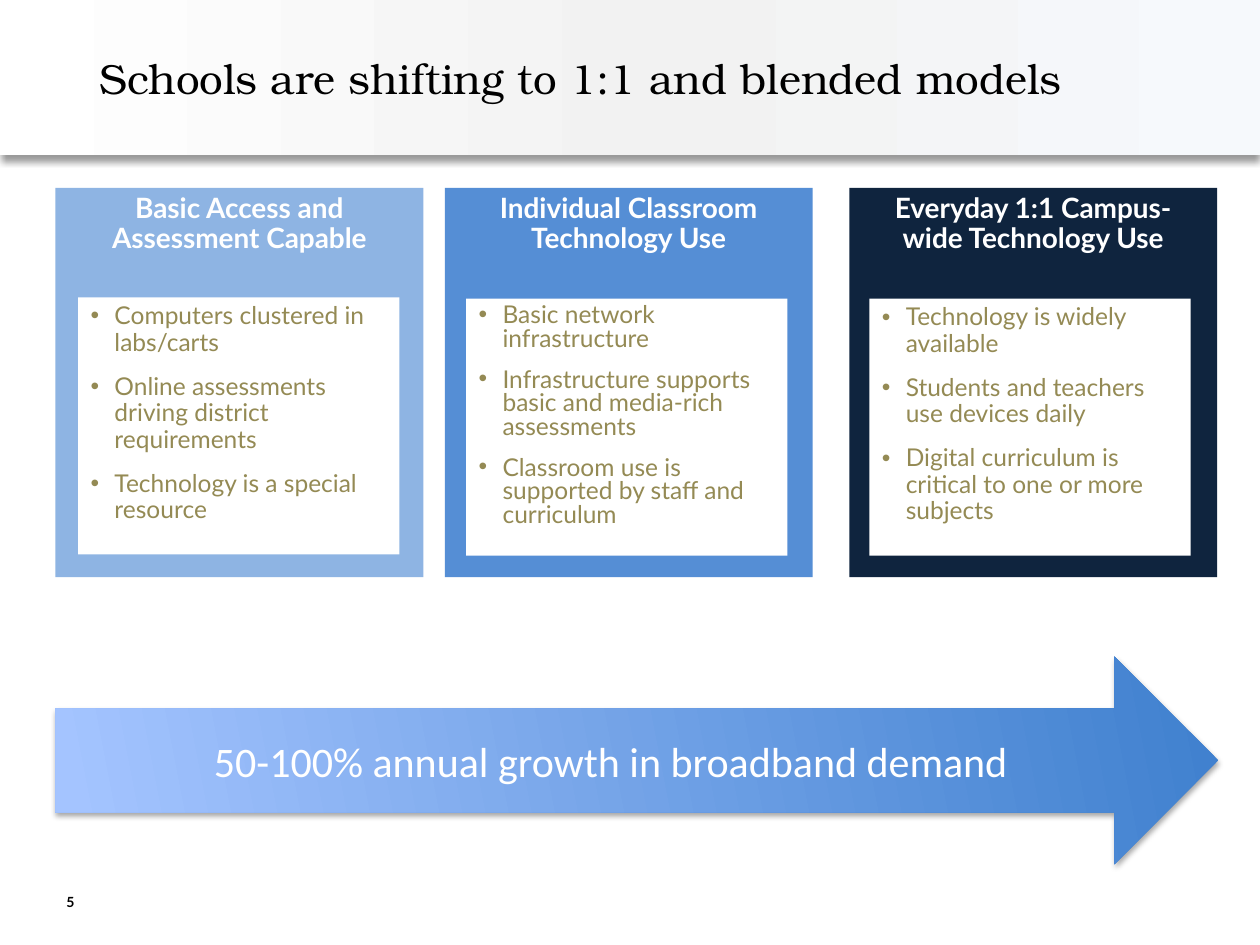
from dataclasses import dataclass

from lxml.etree import SubElement
from pptx import Presentation
from pptx.dml.color import RGBColor
from pptx.enum.shapes import MSO_SHAPE as Shape
from pptx.enum.text import MSO_ANCHOR as Anchor, PP_ALIGN as Align
from pptx.oxml.ns import qn
from pptx.util import Inches, Pt


@dataclass(frozen=True)
class Theme:
    white: str = "FFFFFF"
    black: str = "000000"
    bullet_text: str = "948A54"
    light_blue: str = "8EB4E3"
    mid_blue: str = "558ED5"
    navy: str = "0F243E"
    banner_stops: tuple = ((0, "F6F9FC"), (48, "F2F2F2"), (100, "FFFFFF"))
    arrow_stops: tuple = ((0, "3F80CE"), (98, "A4C4FF"))
    title_font: str = "TeX Gyre Bonum"
    body_font: str = "Lato"
    arrow_font: str = "Calibri"
    title_size: int = 24
    heading_size: int = 16
    bullet_size: int = 14
    number_size: int = 8


class SlideBuilder:
    def __init__(self, slide, theme):
        self.slide = slide
        self.theme = theme

    def shape(self, kind, box, color=None):
        shape = self.slide.shapes.add_shape(kind, *map(Inches, box))
        shape.shadow.inherit = False
        shape.line.fill.background()
        if color:
            shape.fill.solid()
            shape.fill.fore_color.rgb = RGBColor.from_string(color)
        return shape

    def gradient(self, shape, stops, angle):
        """Fill with (percent, colour) stops; the angle runs clockwise."""
        shape.fill.gradient()
        shape.fill.gradient_angle = 360 - angle
        stop_list = shape._element.spPr.find(".//" + qn("a:gsLst"))
        for stop in list(stop_list):
            stop_list.remove(stop)
        for percent, color in stops:
            stop = SubElement(stop_list, qn("a:gs"), pos=str(percent * 1000))
            SubElement(stop, qn("a:srgbClr"), val=color)

    def drop_shadow(self, shape, opacity, blur, distance):
        effects = shape._element.spPr.find(qn("a:effectLst"))
        shadow = SubElement(
            effects, qn("a:outerShdw"), blurRad=str(Pt(blur)),
            dist=str(Pt(distance)), dir="5400000", algn="ctr", rotWithShape="0")
        color = SubElement(shadow, qn("a:srgbClr"), val=self.theme.black)
        SubElement(color, qn("a:alpha"), val=str(opacity * 1000))

    def frame(self, shape, anchor=Anchor.TOP, side_inset=0.1):
        frame = shape.text_frame
        frame.word_wrap = True
        frame.vertical_anchor = anchor
        frame.margin_left = frame.margin_right = Inches(side_inset)
        return frame

    def add_run(self, paragraph, text, size, color, font=None, bold=False,
                align=Align.LEFT):
        paragraph.alignment = align
        run = paragraph.add_run()
        run.text = text
        run.font.name = font or self.theme.body_font
        run.font.size = Pt(size)
        run.font.bold = bold
        run.font.color.rgb = RGBColor.from_string(color)

    def text(self, box, text, size, **style):
        shape = self.slide.shapes.add_textbox(*map(Inches, box))
        frame = self.frame(shape, Anchor.MIDDLE)
        self.add_run(frame.paragraphs[0], text, size, self.theme.black, **style)

    def banner(self, box):
        banner = self.shape(Shape.RECTANGLE, box)
        self.gradient(banner, self.theme.banner_stops, 180)
        self.drop_shadow(banner, 40, 4, 3)

    def panel(self, left, color, heading):
        panel = self.shape(Shape.RECTANGLE, (left, 1.49, 2.92, 3.09), color)
        paragraph = self.frame(panel, side_inset=0.3).paragraphs[0]
        paragraph.line_spacing = 0.9
        paragraph.space_before = Pt(10)
        self.add_run(paragraph, heading, self.theme.heading_size,
                     self.theme.white, bold=True, align=Align.CENTER)

    def bullets(self, left, top, items, line_spacing):
        card = self.shape(Shape.RECTANGLE, (left, top, 2.55, 2.04), self.theme.white)
        frame = self.frame(card)
        for index, item in enumerate(items):
            paragraph = frame.add_paragraph() if index else frame.paragraphs[0]
            paragraph.line_spacing = line_spacing
            paragraph.space_before = Pt(10)
            self.add_run(paragraph, item, self.theme.bullet_size,
                         self.theme.bullet_text)
            properties = paragraph._p.get_or_add_pPr()
            properties.set("marL", str(Inches(0.19)))
            properties.set("indent", str(Inches(-0.19)))
            SubElement(properties, qn("a:buFont"), typeface="Arial")
            SubElement(properties, qn("a:buChar"), char="•")

    def arrow(self, box, text):
        arrow = self.shape(Shape.RIGHT_ARROW, box)
        self.gradient(arrow, self.theme.arrow_stops, 169)
        self.drop_shadow(arrow, 35, 3.1, 1.8)
        paragraph = self.frame(arrow, Anchor.MIDDLE).paragraphs[0]
        self.add_run(paragraph, text, self.theme.title_size, self.theme.white,
                     font=self.theme.arrow_font, align=Align.CENTER)


def main():
    presentation = Presentation()
    presentation.slide_width = Inches(10)
    presentation.slide_height = Inches(7.5)
    slide = presentation.slides.add_slide(presentation.slide_layouts[6])
    theme = Theme()
    builder = SlideBuilder(slide, theme)

    # Panel left, colour, heading; card left, top, line spacing, bullets
    stages = [
        (0.44, theme.light_blue, "Basic Access and Assessment Capable",
         0.62, 2.36, 0.9,
         ["Computers clustered in labs/carts",
          "Online assessments driving district requirements",
          "Technology is a special resource"]),
        (3.53, theme.mid_blue, "Individual Classroom Technology Use",
         3.7, 2.37, 0.8,
         ["Basic network infrastructure",
          "Infrastructure supports basic and media-rich assessments",
          "Classroom use is supported by staff and curriculum"]),
        (6.74, theme.navy, "Everyday 1:1 Campus-wide Technology Use",
         6.9, 2.37, 0.9,
         ["Technology is widely available",
          "Students and teachers use devices daily",
          "Digital curriculum is critical to one or more subjects"]),
    ]

    builder.banner((0, 0, 10, 1.23))
    for left, color, heading, card_left, card_top, spacing, items in stages:
        builder.panel(left, color, heading)
        builder.bullets(card_left, card_top, items, spacing)
    builder.arrow((0.44, 5.21, 9.23, 1.65),
                  "50-100% annual growth in broadband demand")
    builder.text((0.69, 0, 8.62, 1.23),
                 "Schools are shifting to 1:1 and blended models",
                 theme.title_size, font=theme.title_font)
    builder.text((0.35, 7.05, 0.34, 0.21), "5", theme.number_size,
                 bold=True, align=Align.RIGHT)

    presentation.save("out.pptx")


if __name__ == "__main__":
    main()
